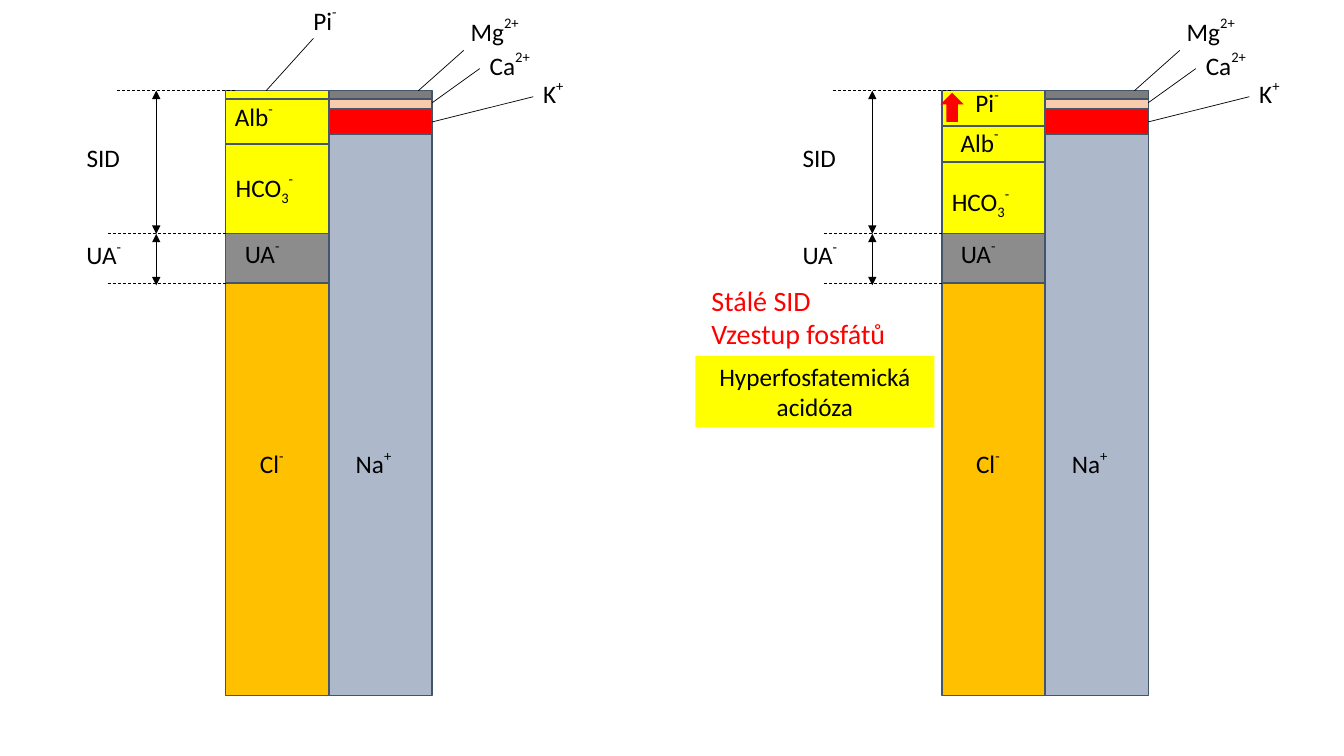
from dataclasses import dataclass
from lxml import etree
from pptx import Presentation
from pptx.dml.color import RGBColor
from pptx.enum import dml, shapes, text
from pptx.oxml import ns
from pptx.util import Pt


@dataclass(frozen=True)
class Theme:
    """Colours, font and sizes of the slide."""
    font: str = "Calibri"
    body: int = 18
    note: int = 20
    ink: str = "000000"
    edge: str = "44546A"
    red: str = "FF0000"
    yellow: str = "FFFF00"
    orange: str = "FFC000"
    blue: str = "ADB9CA"
    peach: str = "F8CBAD"
    dark: str = "7C7C7C"
    gray: str = "8C8C8C"
    hair: float = 0.5
    rim: float = 1


T = Theme()
RECT = shapes.MSO_SHAPE.RECTANGLE
FIT = text.MSO_AUTO_SIZE.SHAPE_TO_FIT_TEXT
ROW = 36

MG, CA, K = ("Mg", "", "2+"), ("Ca", "", "2+"), ("K", "", "+")
NA, CL, UA = ("Na", "", "+"), ("Cl", "", "-"), ("UA", "", "-")
PI, ALB, HCO = ("Pi", "", "-"), ("Alb", "", "-"), ("HCO", "3", "-")
SID = ("SID", "", "")


def style(item, form):
    """Set each attribute named in the format."""
    for name, value in form.items():
        setattr(item, name, value)


def write(para, parts, size=T.body, color=T.ink):
    """Add the base, subscript and superscript as runs."""
    for part, shift in zip(parts, (0, -25, 50)):
        if part:
            run = para.add_run()
            run.text = part
            style(run.font, {"name": T.font, "size": Pt(size)})
            run.font.color.rgb = RGBColor.from_string(color)
            if shift:
                run.font._element.set("baseline", str(shift * 1000))


def label(slide, x, y, wide, parts):
    """Place a one-line label."""
    frame = slide.shapes.add_textbox(Pt(x), Pt(y), Pt(wide), Pt(ROW)).text_frame
    style(frame, {"word_wrap": False, "auto_size": FIT})
    write(frame.paragraphs[0], parts)


def block(slide, box, fill, edge=None, kind=RECT):
    """Place a filled shape, with a rim if one is given."""
    shape = slide.shapes.add_shape(kind, *map(Pt, box))
    shape.shadow.inherit = False
    shape.fill.solid()
    shape.fill.fore_color.rgb = RGBColor.from_string(fill)
    if edge:
        shape.line.color.rgb = RGBColor.from_string(edge)
        shape.line.width = Pt(T.rim)
    else:
        shape.line.fill.background()
    return shape


def rule(slide, start, end, dash=False, heads=False):
    """Draw a thin line, dashed or with two arrowheads."""
    line = slide.shapes.add_connector(
        shapes.MSO_CONNECTOR.STRAIGHT, *map(Pt, (*start, *end)))
    line.line.color.rgb = RGBColor.from_string(T.ink)
    line.line.width = Pt(T.hair)
    if dash:
        line.line.dash_style = dml.MSO_LINE.DASH
    if heads:
        pen = line.line._get_or_add_ln()
        for tag in ("a:headEnd", "a:tailEnd"):
            etree.SubElement(pen, ns.qn(tag), type="triangle")
    etree.SubElement(line._element.spPr, ns.qn("a:effectLst"))


def stack(slide, box, parts):
    """Fill a column from the top with blocks of the given heights."""
    left, top, wide, _ = box
    for high, fill in parts:
        block(slide, (left, top, wide, high), fill, T.edge)
        top += high


def panel(slide, box, pi, alb, tags, leads):
    """Draw one ionogram with its scale, labels and leader lines."""
    left, top, wide, high = box
    half = wide / 2
    base, floor = 102.2, 137.5
    anions = [(pi, T.yellow), (alb, T.yellow), (base - pi - alb, T.yellow),
              (floor - base, T.gray), (high - floor, T.orange)]
    cations = [(5.8, T.dark), (7.2, T.peach), (18, T.red), (high - 31, T.blue)]
    stack(slide, (left, top, half, high), anions)
    stack(slide, (left + half, top, half, high), cations)

    for x, y in ((6.5, 0), (0, base), (0, floor)):
        rule(slide, (left + x, top + y), (left + x - 85, top + y), dash=True)
    for y, end in ((0, base), (base, floor + 1.5)):
        rule(slide, (left - 49.7, top + y), (left - 49.7, top + end), heads=True)

    lines = [(169.9, -28.8, 137.5, 0), (181.4, -15.8, wide, 8.6),
             (219.6, 4.3, wide, 22.3), *leads]
    for x, y, far, end in lines:
        rule(slide, (left + x, top + y), (left + far, top + end))

    common = [(167.8, -58.3, 65.5, MG), (181.4, -33.8, 58.3, CA),
              (219.6, -13.7, 41, K), (85.7, 250.6, 51.8, NA),
              (17.3, 250.6, 42.5, CL), (6.5, 100.8, 54.7, UA),
              (-106.6, 33.1, 54, SID), (-106.6, 101.5, 54.7, UA)]
    for x, y, span, parts in common + tags:
        label(slide, left + x, top + y, span, parts)


def notice(slide, box):
    """Write the red findings above the yellow diagnosis."""
    left, top, wide, high = box
    split = 55.5
    frame = slide.shapes.add_textbox(
        Pt(left + 4.3), Pt(top), Pt(141.8), Pt(split)).text_frame
    style(frame, {"word_wrap": False, "auto_size": FIT})
    first, second = frame.paragraphs[0], frame.add_paragraph()
    write(first, ("Stálé SID",), T.note, T.red)
    write(second, ("Vzestup fosfátů",), T.note, T.red)

    shape = block(slide, (left, top + split, wide, high - split), T.yellow)
    style(shape.text_frame, {"word_wrap": True, "auto_size": FIT,
                             "vertical_anchor": text.MSO_ANCHOR.TOP})
    para = shape.text_frame.paragraphs[0]
    para.alignment = text.PP_ALIGN.CENTER
    write(para, ("Hyperfosfatemická acidóza",))


def main():
    """Build and save the slide."""
    deck = Presentation()
    style(deck, {"slide_width": Pt(960), "slide_height": Pt(540)})
    slide = deck.slides.add_slide(deck.slide_layouts[6])
    top, wide, high = 64.8, 147.4, 432
    left, right = 161.3, 672.8
    panel(slide, (left, top, wide, high), 5.8, 32.4,
          [(55.4, -66.2, 40.3, PI), (-0.7, 2.9, 56.2, ALB),
           (0, 53.3, 79.2, HCO)],
          [(28.8, 0, 62.6, -37.4)])
    panel(slide, (right, top, wide, high), 25.2, 25.9,
          [(16.9, -7.2, 40.3, PI), (6.3, 20.9, 57.6, ALB),
           (0, 63.4, 79.2, HCO)], [])
    notice(slide, (496.8, 198.7, 170.6, 106.6))
    block(slide, (right - 1, top + 1.4, 16.6, 20.9), T.red,
          kind=shapes.MSO_SHAPE.UP_ARROW)
    deck.save("out.pptx")


if __name__ == "__main__":
    main()
